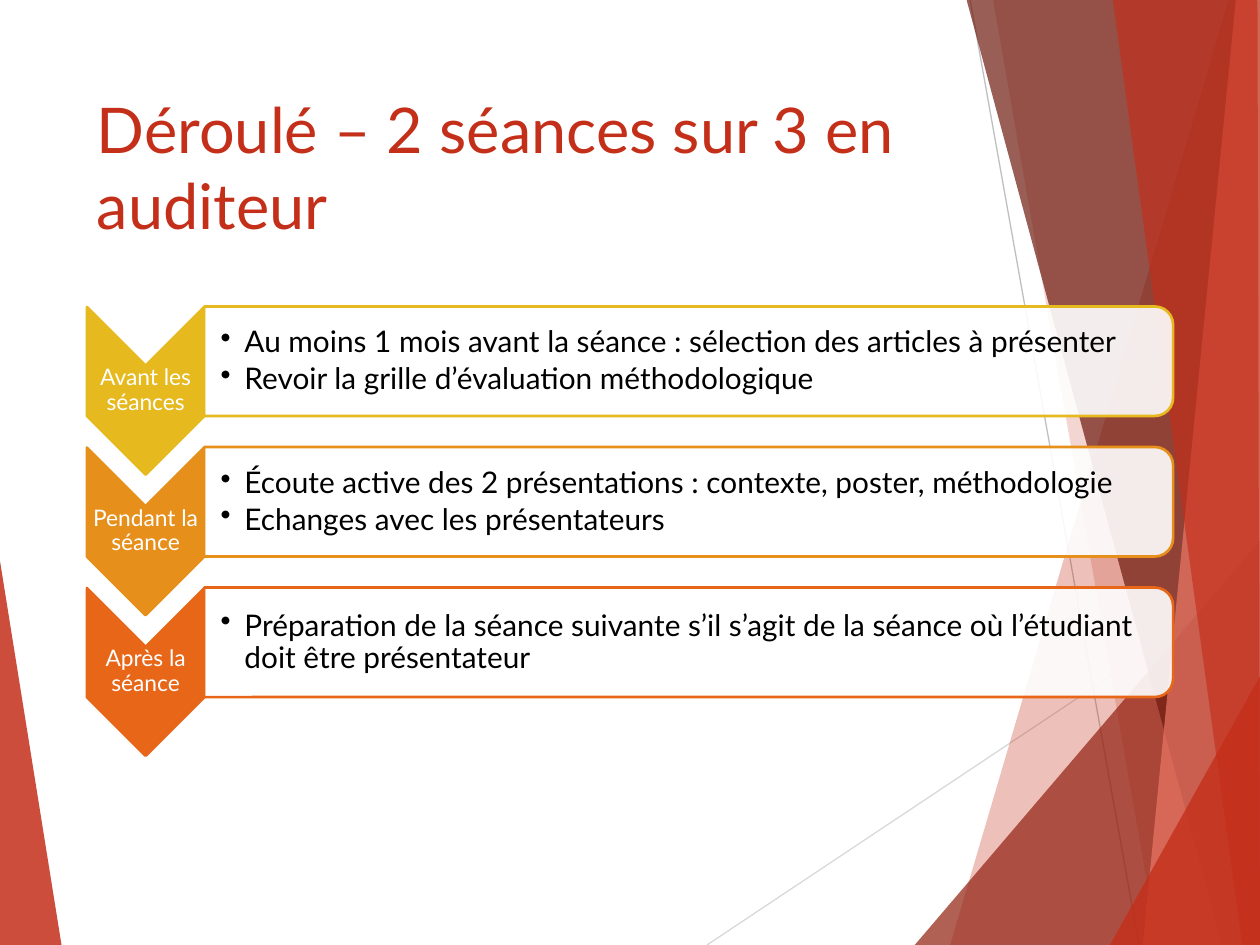
from lxml import etree
from pptx import Presentation
from pptx.dml.color import RGBColor
from pptx.enum.shapes import MSO_CONNECTOR, MSO_SHAPE
from pptx.enum.text import MSO_ANCHOR, MSO_AUTO_SIZE, PP_ALIGN
from pptx.oxml.ns import qn
from pptx.util import Pt

FONT = "Lato"
COLORS = {
    "red": "C42F1A", "dark red": "932313", "maroon": "6E1A0E", "pink": "EB7766",
    "white": "FFFFFF", "black": "000000", "grey": "BFBFBF", "light grey": "D9D9D9",
    "yellow": "E6B91E", "amber": "E6901B", "orange": "E76618",
}


def paint(shape, color, opacity=100, outline=None):
    shape.shadow.inherit = False
    shape.fill.solid()
    shape.fill.fore_color.rgb = RGBColor.from_string(COLORS[color])
    if opacity < 100:
        tint = shape.fill._xPr.find(qn("a:solidFill"))[0]
        etree.SubElement(tint, qn("a:alpha"), val=str(opacity * 1000))
    if outline:
        shape.line.color.rgb = RGBColor.from_string(COLORS[outline])
        shape.line.width = Pt(1.5)
    else:
        shape.line.fill.background()


def write(box, lines, size, color, align, after=0, inset=1, bullet=False):
    frame = box.text_frame
    frame.word_wrap = True
    frame.vertical_anchor = MSO_ANCHOR.MIDDLE
    frame.margin_left = Pt(inset)
    frame.margin_right = frame.margin_top = frame.margin_bottom = Pt(1)
    frame.text = "\n".join(lines)
    for para in frame.paragraphs:
        para.alignment = align
        para.line_spacing = 0.9
        para.space_after = Pt(after)
        if bullet:
            props = para._p.get_or_add_pPr()
            props.set("marL", str(Pt(13.7)))
            props.set("indent", str(-Pt(13.7)))
            etree.SubElement(props, qn("a:buChar"), char="•")
        para.font.name = FONT
        para.font.size = Pt(size)
        para.font.color.rgb = RGBColor.from_string(COLORS[color])


deck = Presentation()
deck.slide_width, deck.slide_height = Pt(720), Pt(540)
page = deck.slides.add_slide(deck.slide_layouts[5])
shapes = page.shapes

rays = [
    (404, 540, 720.7, 329, "light grey"),
    (554.4, 0, 650.9, 540, "grey"),
]
for x1, y1, x2, y2, color in rays:
    ray = shapes.add_connector(MSO_CONNECTOR.STRAIGHT, Pt(x1), Pt(y1), Pt(x2), Pt(y2))
    ray.line.color.rgb = RGBColor.from_string(COLORS[color])
    ray.line.width = Pt(0.75)
    etree.SubElement(ray._element.spPr, qn("a:effectLst"))

facets = [
    ("red", 85, [(-0.7, 316), (35.3, 540.7), (-0.7, 540)]),
    ("red", 30, [(702, 0), (543, 540), (721.4, 540.7), (720.7, 0.7)]),
    ("red", 20, [(567.4, -0.7), (661.7, 540), (720.7, 540), (720.7, -0.7)]),
    ("dark red", 72, [(522.7, 540), (720, 308.9), (720.7, 540)]),
    ("maroon", 70, [(552.2, -0.7), (698.4, 540), (720.7, 539.3), (720.7, -0.7)]),
    ("pink", 70, [(706.3, -0.7), (653, 540), (720.7, 540), (720, -0.7)]),
    ("red", 65, [(635.8, -0.7), (709.9, 540), (720, 540), (718.6, -0.7)]),
    ("red", 80, [(634.3, 540), (720.7, 385.2), (720.7, 540)]),
]
for color, opacity, corners in facets:
    points = [(Pt(x), Pt(y)) for x, y in corners]
    outline = shapes.build_freeform(*points[0], scale=1.0)
    outline.add_line_segments(points[1:], close=True)
    paint(outline.convert_to_shape(), color, opacity)

title = shapes.title
title.left, title.top, title.width, title.height = Pt(48.2), Pt(48.2), Pt(500), Pt(104)
title.text_frame.text = "Déroulé – 2 séances sur 3 en auditeur"
title.text_frame.auto_size = MSO_AUTO_SIZE.NONE
title.text_frame.vertical_anchor = MSO_ANCHOR.TOP
para = title.text_frame.paragraphs[0]
para.alignment = PP_ALIGN.LEFT
para.font.name = FONT
para.font.size = Pt(36)
para.font.color.rgb = RGBColor.from_string(COLORS["red"])

steps = [
    ("Avant les séances", "yellow", [
        "Au moins 1 mois avant la séance : sélection des articles à présenter",
        "Revoir la grille d’évaluation méthodologique"]),
    ("Pendant la séance", "amber", [
        "Écoute active des 2 présentations : contexte, poster, méthodologie",
        "Echanges avec les présentateurs"]),
    ("Après la séance", "orange", [
        "Préparation de la séance suivante s’il s’agit de la séance où l’étudiant "
        "doit être présentateur"]),
]
STEP_GAP = 80.3
for index, (name, color, details) in enumerate(steps):
    drop = index * STEP_GAP

    chevron = shapes.add_shape(
        MSO_SHAPE.CHEVRON, Pt(35.3), Pt(189.9 + drop), Pt(95.8), Pt(67))
    chevron.rotation = 90
    paint(chevron, color, outline=color)

    label = shapes.add_textbox(Pt(49.7), Pt(208.9 + drop), Pt(67), Pt(28.8))
    write(label, [name], 13, "white", PP_ALIGN.CENTER, after=4.55)

    panel = shapes.add_shape(
        MSO_SHAPE.ROUND_2_SAME_RECTANGLE, Pt(362.2), Pt(-70.4 + drop), Pt(62.6), Pt(553.7))
    panel.rotation = 90
    paint(panel, "white", 90, outline=color)

    box = shapes.add_textbox(Pt(116.6), Pt(178.5 + drop), Pt(550.8), Pt(56.2))
    write(box, details, 17, "black", PP_ALIGN.LEFT, after=2.55, inset=9.4, bullet=True)

deck.save("out.pptx")
